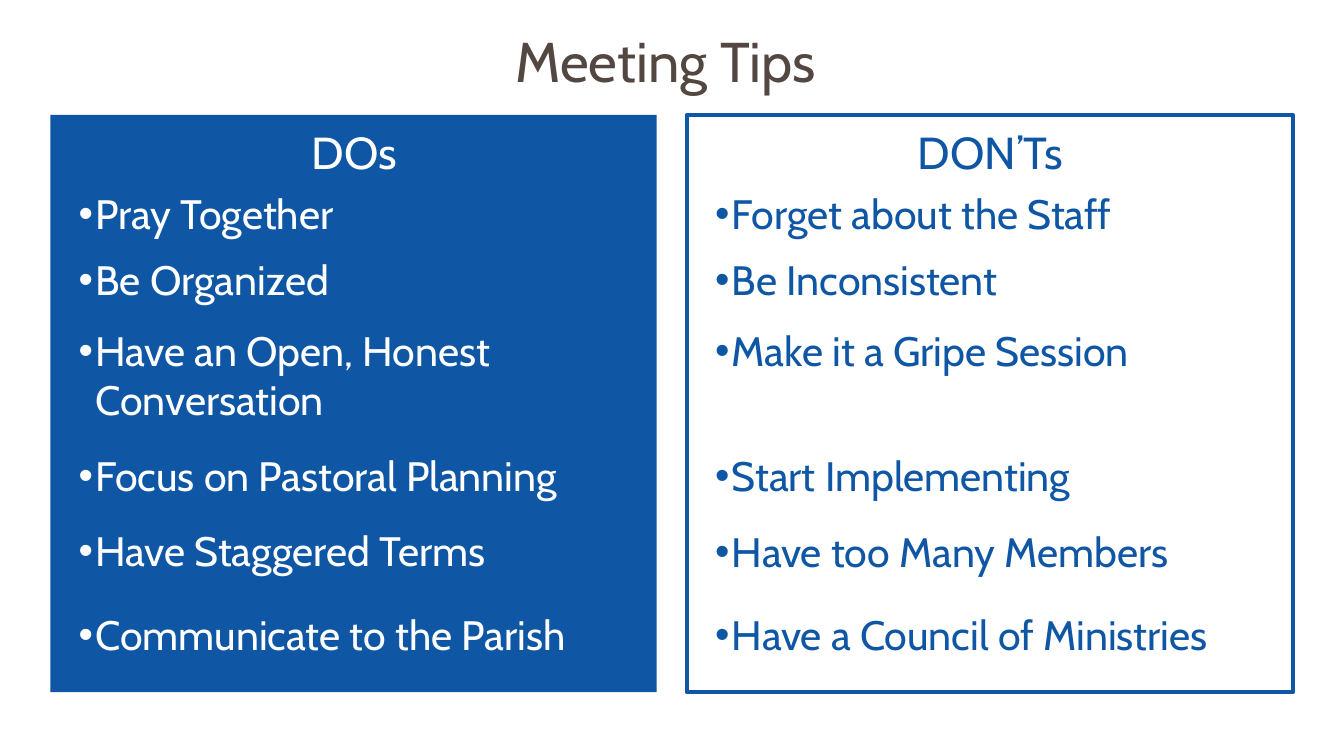
from dataclasses import dataclass

from pptx import Presentation
from pptx.dml.color import RGBColor
from pptx.enum.shapes import MSO_SHAPE
from pptx.enum.text import MSO_ANCHOR, MSO_AUTO_SIZE, PP_ALIGN
from pptx.util import Inches, Pt


@dataclass(frozen=True)
class Theme:
    """Hold the font, colours and type sizes of the slide."""

    font: str = "Cabin"
    blue: str = "0F57A5"
    white: str = "FFFFFF"
    brown: str = "534741"
    title: int = 60
    head: int = 48
    item: int = 44
    lead: float = 67.2
    edge: float = 4.5


THEME = Theme()
TOPS = [2.81, 3.8, 4.86, 6.73, 7.86, 9.11]
LINE = 0.74
PANEL_TOP, PANEL_W, PANEL_H = 1.71, 9.02, 8.59
DOS = [
    ("Pray Together", 1),
    ("Be Organized", 1),
    ("Have an Open, Honest Conversation", 2),
    ("Focus on Pastoral Planning", 1),
    ("Have Staggered Terms", 1),
    ("Communicate to the Parish", 1),
]
DONTS = [
    ("Forget about the Staff", 1),
    ("Be Inconsistent", 1),
    ("Make it a Gripe Session", 1),
    ("Start Implementing", 1),
    ("Have too Many Members", 1),
    ("Have a Council of Ministries", 1),
]


def write(para, text, *, size, color, align=PP_ALIGN.LEFT, lead=1.0, before=0):
    """Put formatted text into a paragraph."""
    para.alignment = align
    para.line_spacing = lead
    para.space_before = before
    font = para.add_run().font
    para.runs[0].text = text
    font.name, font.size, font.bold = THEME.font, Pt(size), False
    font.color.rgb = RGBColor.from_string(color)


def place(holder, left, top, width, height):
    """Move a placeholder, clear its margins and return its text frame."""
    holder.left, holder.top = Inches(left), Inches(top)
    holder.width, holder.height = Inches(width), Inches(height)
    frame = holder.text_frame
    frame.margin_left = frame.margin_right = 0
    frame.margin_top = frame.margin_bottom = 0
    frame.vertical_anchor = MSO_ANCHOR.TOP
    frame.auto_size = MSO_AUTO_SIZE.NONE
    frame.word_wrap = True
    return frame


def add_head(holder, text, box, size, color):
    """Fill a placeholder with one centred line."""
    frame = place(holder, *box)
    write(frame.paragraphs[0], text, size=size, color=color,
          align=PP_ALIGN.CENTER, lead=Pt(THEME.lead))


def add_list(holder, items, left, width, color):
    """Fill a placeholder with bullets whose rows start at the shared tops."""
    frame = place(holder, left, TOPS[0], width, TOPS[-1] + LINE - TOPS[0])
    end = TOPS[0]
    for index, ((text, lines), top) in enumerate(zip(items, TOPS)):
        para = frame.add_paragraph() if index else frame.paragraphs[0]
        write(para, text, size=THEME.item, color=color, before=Inches(top - end))
        props = para._p.get_or_add_pPr()
        props.set("marL", str(Inches(0.5)))
        props.set("indent", str(Inches(-0.25)))
        end = top + LINE * lines


def add_panel(slide, left, solid):
    """Draw a solid or outlined panel behind the text."""
    panel = slide.shapes.add_shape(
        MSO_SHAPE.RECTANGLE, Inches(left), Inches(PANEL_TOP),
        Inches(PANEL_W), Inches(PANEL_H))
    panel.shadow.inherit = False
    blue = RGBColor.from_string(THEME.blue)
    if solid:
        panel.fill.solid()
        panel.fill.fore_color.rgb = blue
        panel.line.fill.background()
    else:
        panel.fill.background()
        panel.line.color.rgb = blue
        panel.line.width = Pt(THEME.edge)
    tree = panel._element.getparent()
    tree.insert(2, panel._element)


def add_column(slide, heads, items, left, inset, width, solid):
    """Build a panel with its heading and list."""
    color = THEME.white if solid else THEME.blue
    add_panel(slide, left, solid)
    holder, text = heads
    add_head(holder, text, (left + 2.09, 1.72, 4.86, 0.88), THEME.head, color)
    holder, rows = items
    add_list(holder, rows, left + inset, width, color)


def main():
    """Build and save the slide."""
    deck = Presentation()
    deck.slide_width, deck.slide_height = Inches(20), Inches(11.25)
    slide = deck.slides.add_slide(deck.slide_layouts.get_by_name("Comparison"))
    title, do_head, do_list, dont_head, dont_list = slide.placeholders
    add_head(title, "Meeting Tips", (6.75, 0.46, 6.31, 0.94),
             THEME.title, THEME.brown)
    add_column(slide, (do_head, "DOs"), (do_list, DOS), 0.75, 0.17, 8.64, True)
    add_column(slide, (dont_head, "DON’Ts"), (dont_list, DONTS),
               10.22, 0.17, 8.7, False)
    deck.save("out.pptx")


if __name__ == "__main__":
    main()
